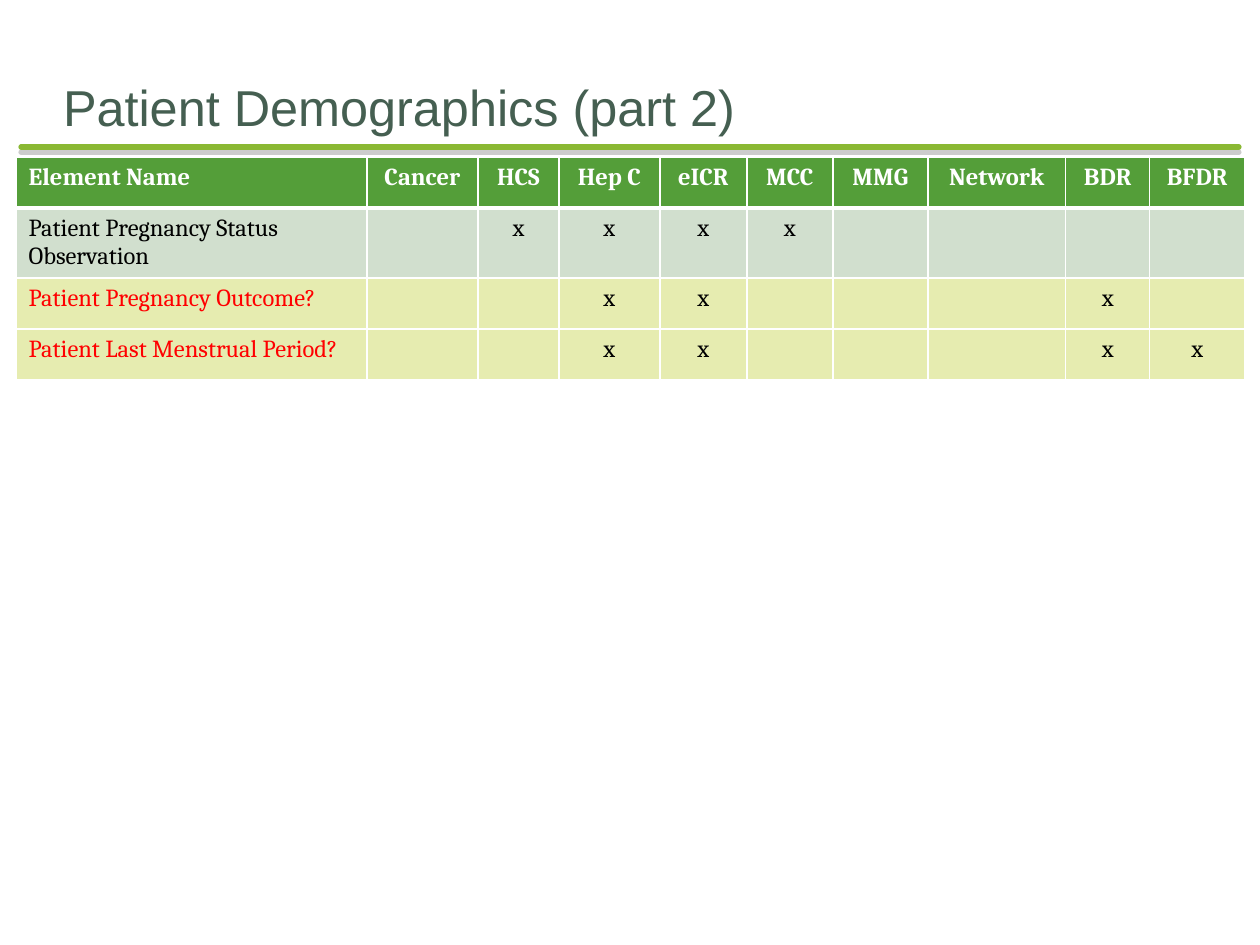
from pptx import Presentation
from pptx.dml.color import RGBColor
from pptx.enum.shapes import MSO_CONNECTOR
from pptx.enum.text import MSO_ANCHOR, PP_ALIGN
from pptx.oxml import parse_xml
from pptx.oxml.ns import nsdecls
from pptx.util import Pt

STRAIGHT = MSO_CONNECTOR.STRAIGHT
BOTTOM = MSO_ANCHOR.BOTTOM
LEFT, CENTER = PP_ALIGN.LEFT, PP_ALIGN.CENTER

# Content
TITLE = "Patient Demographics (part 2)"
HEADERS = ["Element Name", "Cancer", "HCS", "Hep C", "eICR", "MCC", "MMG",
           "Network", "BDR", "BFDR"]
# Element name, columns marked with x, row fill, name colour
ELEMENTS = [
    ("Patient Pregnancy Status Observation", {"HCS", "Hep C", "eICR", "MCC"},
     "sage", "black"),
    ("Patient Pregnancy Outcome?", {"Hep C", "eICR", "BDR"}, "lime", "red"),
    ("Patient Last Menstrual Period?", {"Hep C", "eICR", "BDR", "BFDR"},
     "lime", "red"),
]
COLORS = {"title": "455F51", "rule": "8AB833", "shadow": "808080",
          "header": "549E39", "sage": "D1DFCE", "lime": "E6ECB0",
          "white": "FFFFFF", "black": "000000", "red": "FF0000"}

# Layout in px, 126 to the inch
PX = 914400 // 126
SLIDE_SIZE = (1260, 945)
TITLE_BOX = (63, 63, 1134, 74)
RULE = (21, 147, 1239, 147)
TABLE_ORIGIN = (16, 157)
COLUMN_WIDTHS = [351, 111, 81, 101, 87, 86, 95, 138, 84, 95]
ROW_HEIGHTS = [51, 70, 51, 51]


def emu(lengths):
    return [length * PX for length in lengths]


def color(name):
    return RGBColor.from_string(COLORS[name])


def style_text(paragraph, font_name, size, color_name, bold=False):
    for run in paragraph.runs:
        run.font.name = font_name
        run.font.size = Pt(size)
        run.font.bold = bold
        run.font.color.rgb = color(color_name)


def set_borders(cell, bottom_width):
    properties = cell._tc.get_or_add_tcPr()
    widths = {"lnL": 1, "lnR": 1, "lnT": 1, "lnB": bottom_width}
    for index, (side, width) in enumerate(widths.items()):
        properties.insert(index, parse_xml(
            f'<a:{side} {nsdecls("a")} w="{Pt(width)}"><a:solidFill>'
            f'<a:srgbClr val="{COLORS["white"]}"/></a:solidFill></a:{side}>'))


def fill_cell(cell, text, fill, text_color, alignment, header):
    cell.fill.solid()
    cell.fill.fore_color.rgb = color(fill)
    set_borders(cell, 3 if header else 1)
    if text:
        cell.text_frame.text = text
        paragraph = cell.text_frame.paragraphs[0]
        paragraph.alignment = alignment
        style_text(paragraph, "Cambria", 14, text_color, header)


presentation = Presentation()
presentation.slide_width, presentation.slide_height = emu(SLIDE_SIZE)
slide = presentation.slides.add_slide(presentation.slide_layouts[5])

# Title
title = slide.shapes.title
title.left, title.top, title.width, title.height = emu(TITLE_BOX)
frame = title.text_frame
frame.text = TITLE
frame.word_wrap = True
frame.vertical_anchor = BOTTOM
frame.margin_left = frame.margin_right = frame.margin_bottom = 0
frame.paragraphs[0].alignment = LEFT
style_text(frame.paragraphs[0], "Arial", 28.8, "title")

# Rule under the title, with a hard shadow below it
rule = slide.shapes.add_connector(STRAIGHT, *emu(RULE))
rule.line.color.rgb = color("rule")
rule.line.width = Pt(3)
rule.line._get_or_add_ln().set("cap", "rnd")
rule._element.spPr.append(parse_xml(
    f'<a:effectLst {nsdecls("a")}>'
    f'<a:outerShdw blurRad="0" dist="{Pt(3)}" dir="5400000" rotWithShape="0">'
    f'<a:srgbClr val="{COLORS["shadow"]}"><a:alpha val="40000"/></a:srgbClr>'
    '</a:outerShdw></a:effectLst>'))

# Table
table = slide.shapes.add_table(
    len(ROW_HEIGHTS), len(HEADERS), *emu(TABLE_ORIGIN),
    *emu([sum(COLUMN_WIDTHS), sum(ROW_HEIGHTS)])).table
for column, width in zip(table.columns, emu(COLUMN_WIDTHS)):
    column.width = width
for row, height in zip(table.rows, emu(ROW_HEIGHTS)):
    row.height = height

for column, header in enumerate(HEADERS):
    alignment = CENTER if column else LEFT
    fill_cell(table.cell(0, column), header, "header", "white", alignment, True)
    for row, (name, marked, fill, name_color) in enumerate(ELEMENTS, start=1):
        mark = "x" if header in marked else ""
        text, text_color = (mark, "black") if column else (name, name_color)
        fill_cell(table.cell(row, column), text, fill, text_color, alignment, False)

presentation.save("out.pptx")
